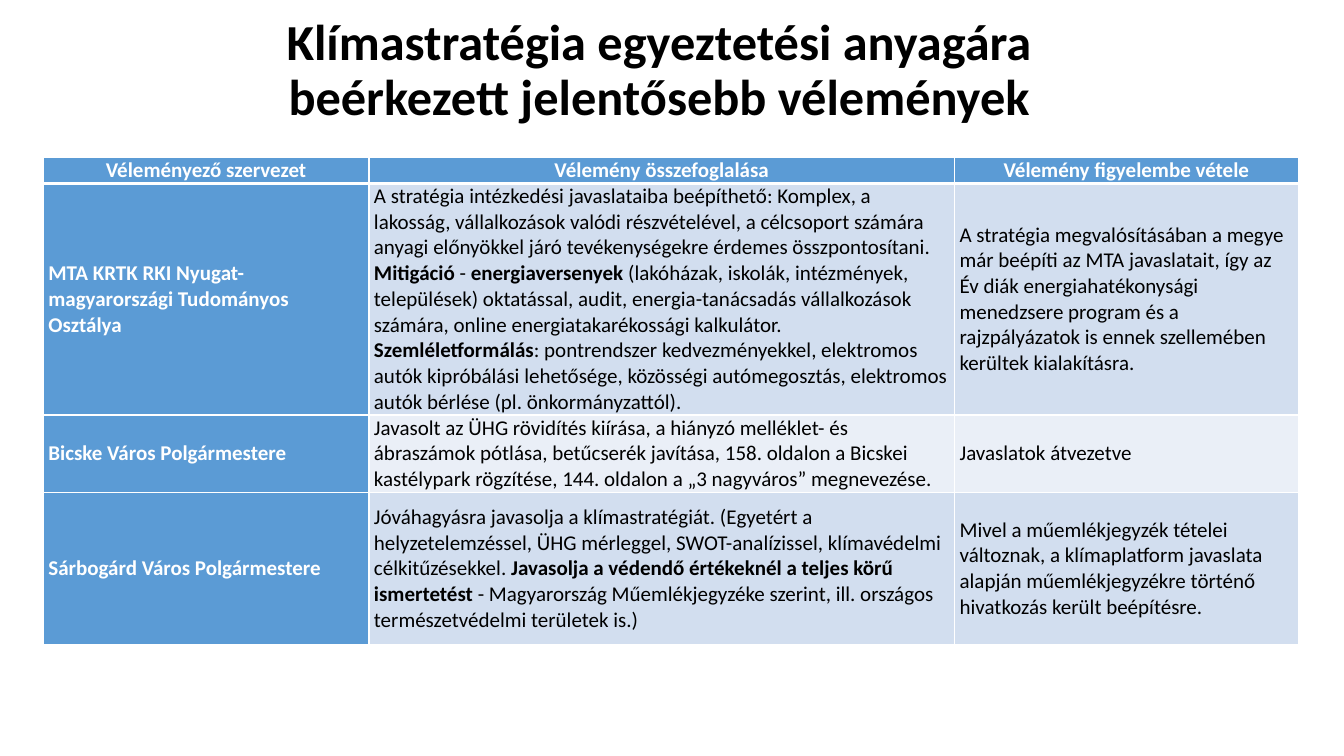
import copy
import pptx
import pptx.util
import pptx.dml.color
import pptx.enum.text
import pptx.oxml
import pptx.oxml.ns

Inches, Pt = pptx.util.Inches, pptx.util.Pt
RGB = pptx.dml.color.RGBColor
ALIGN, ANCHOR = pptx.enum.text.PP_ALIGN, pptx.enum.text.MSO_ANCHOR
BLACK = RGB(0x00, 0x00, 0x00)
WHITE = RGB(0xFF, 0xFF, 0xFF)
BLUE = RGB(0x5B, 0x9B, 0xD5)
BANDS = [RGB(0xEA, 0xEF, 0xF7), RGB(0xD2, 0xDE, 0xEF)]
FONT = "Calibri"

COLS = [3.23, 5.81, 3.41]
ROWS = [0.26, 2.29, 0.77, 1.51]

# Opinions: text between ** marks is bold
DATA = [
    ["Véleményező szervezet", "Vélemény összefoglalása", "Vélemény figyelembe vétele"],
    ["MTA KRTK RKI Nyugat-magyarországi Tudományos Osztálya",
     "A stratégia intézkedési javaslataiba beépíthető: Komplex, a lakosság, vállalkozások "
     "valódi részvételével, a célcsoport számára anyagi előnyökkel járó tevékenységekre "
     "érdemes összpontosítani. **Mitigáció** - **energiaversenyek** (lakóházak, iskolák, "
     "intézmények, települések) oktatással, audit, energia-tanácsadás vállalkozások számára, "
     "online energiatakarékossági kalkulátor. **Szemléletformálás**: pontrendszer "
     "kedvezményekkel, elektromos autók kipróbálási lehetősége, közösségi autómegosztás, "
     "elektromos autók bérlése (pl. önkormányzattól).",
     "A stratégia megvalósításában a megye már beépíti az MTA javaslatait, így az Év diák "
     "energiahatékonysági menedzsere program és a rajzpályázatok is ennek szellemében "
     "kerültek kialakításra."],
    ["Bicske Város Polgármestere",
     "Javasolt az ÜHG rövidítés kiírása, a hiányzó melléklet- és ábraszámok pótlása, "
     "betűcserék javítása, 158. oldalon a Bicskei kastélypark rögzítése, 144. oldalon "
     "a „3 nagyváros” megnevezése.",
     "Javaslatok átvezetve"],
    ["Sárbogárd Város Polgármestere",
     "Jóváhagyásra javasolja a klímastratégiát. (Egyetért a helyzetelemzéssel, ÜHG mérleggel, "
     "SWOT-analízissel, klímavédelmi célkitűzésekkel. **Javasolja a védendő értékeknél a "
     "teljes körű ismertetést **- Magyarország Műemlékjegyzéke szerint, ill. országos "
     "természetvédelmi területek is.)",
     "Mivel a műemlékjegyzék tételei változnak, a klímaplatform javaslata alapján "
     "műemlékjegyzékre történő hivatkozás került beépítésre."],
]


def style(run, size, color, bold):
    run.font.name = FONT
    run.font.size = Pt(size)
    run.font.bold = bold
    run.font.color.rgb = color


def edge(cell, sides):
    props = cell._tc.get_or_add_tcPr()
    for spot, (side, width) in enumerate(sides.items()):
        props.insert(spot, pptx.oxml.parse_xml(
            f'<a:ln{side} {pptx.oxml.ns.nsdecls("a")} w="{Pt(width)}"><a:solidFill>'
            f'<a:srgbClr val="{WHITE}"/></a:solidFill></a:ln{side}>'))


deck = pptx.Presentation()
deck.slide_width, deck.slide_height = Inches(13.333), Inches(7.5)
slide = deck.slides.add_slide(deck.slide_layouts[5])

# Title: two lines standing on the bottom edge of the box
title = slide.shapes.title
title.left, title.top = Inches(0.79), Inches(0.69)
title.width, title.height = Inches(11.5), Inches(0.58)
frame = title.text_frame
frame.text = "Klímastratégia egyeztetési anyagára\vbeérkezett jelentősebb vélemények"
frame.word_wrap = True
frame.auto_size = pptx.enum.text.MSO_AUTO_SIZE.NONE
frame.vertical_anchor = ANCHOR.BOTTOM
frame.margin_top = frame.margin_bottom = Inches(0.02)
head = frame.paragraphs[0]
head.alignment = ALIGN.CENTER
head.line_spacing = 0.9
for run in head.runs:
    style(run, 36, BLACK, True)
for line in head._p.findall(pptx.oxml.ns.qn("a:br")):
    line.insert(0, copy.deepcopy(head.runs[0]._r.rPr))

# Table of opinions
table = slide.shapes.add_table(
    len(ROWS), len(COLS), Inches(0.43), Inches(1.56),
    Inches(sum(COLS)), Inches(sum(ROWS))).table
for col, width in zip(table.columns, COLS):
    col.width = Inches(width)
for row, height in zip(table.rows, ROWS):
    row.height = Inches(height)

for r, row in enumerate(DATA):
    for c, text in enumerate(row):
        cell = table.cell(r, c)
        label = r == 0 or c == 0
        cell.fill.solid()
        cell.fill.fore_color.rgb = BLUE if label else BANDS[r % 2]
        cell.vertical_anchor = ANCHOR.MIDDLE
        cell.margin_left = cell.margin_right = Inches(0.05)
        cell.margin_top = cell.margin_bottom = 0
        edge(cell, {"L": 1, "R": 1, "T": 3 if r == 1 else 1, "B": 3 if r == 0 else 1})
        para = cell.text_frame.paragraphs[0]
        para.alignment = ALIGN.CENTER if r == 0 else ALIGN.LEFT
        for n, part in enumerate(text.split("**")):
            run = para.add_run()
            run.text = part
            style(run, 15, WHITE if label else BLACK, label or n % 2 == 1)

deck.save("out.pptx")
